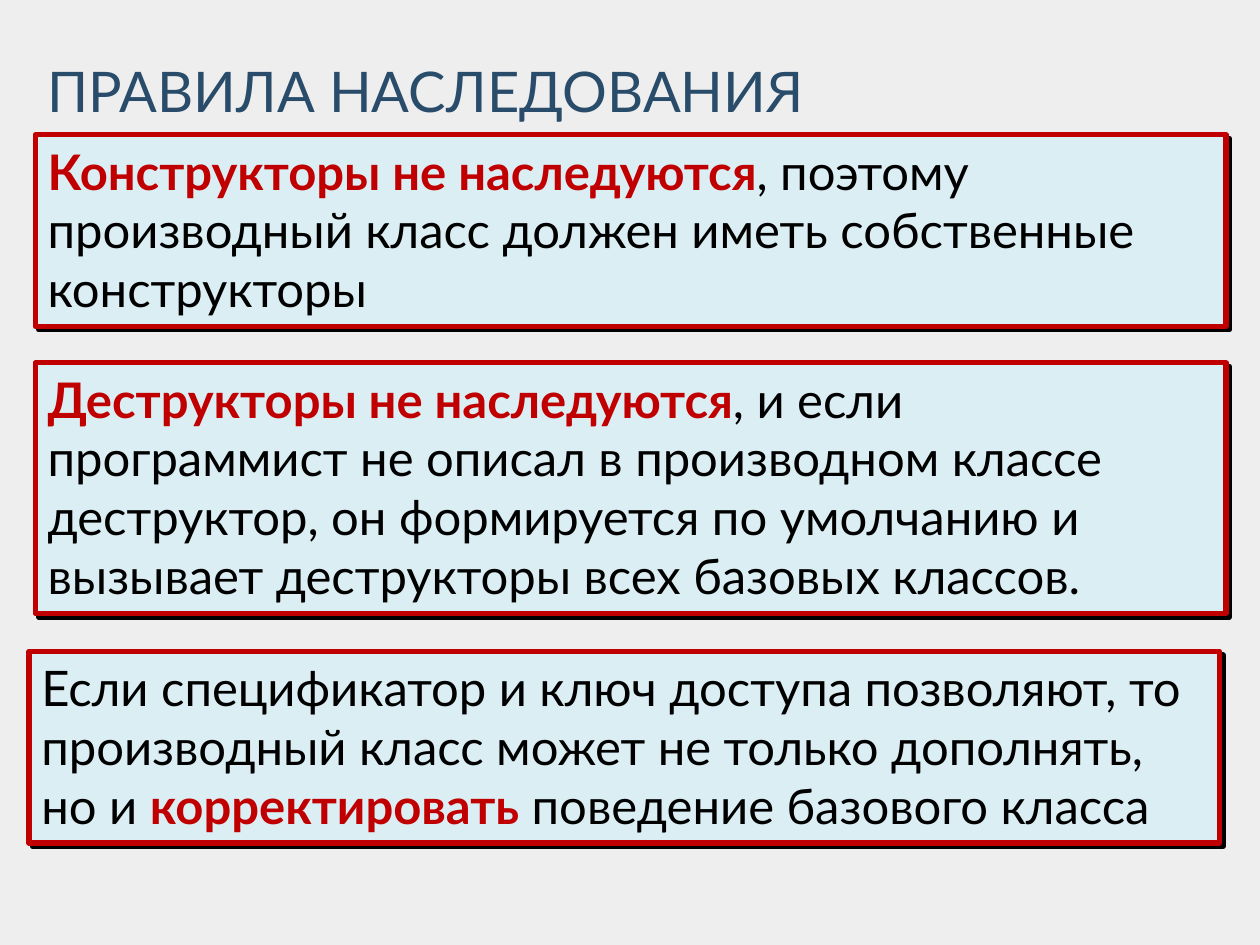
from lxml.etree import SubElement
from pptx import Presentation
from pptx.dml.color import RGBColor
from pptx.enum.shapes import MSO_SHAPE as Shape
from pptx.enum.text import MSO_ANCHOR as Anchor, MSO_AUTO_SIZE as AutoSize, PP_ALIGN as Align
from pptx.oxml.ns import qn
from pptx.util import Inches, Pt

RED = "C00000"
BLACK = "000000"
NAVY = "284C6A"
PALE_BLUE = "DBEEF4"
GRAY = "EEEEEE"

RULES = [
    (0.28, 1.07, 1.52, [
        ("Конструкторы не наследуются", True),
        (", поэтому производный класс должен иметь собственные конструкторы", False),
    ]),
    (0.28, 2.88, 1.99, [
        ("Деструкторы не наследуются", True),
        (", и если программист не описал в производном классе деструктор, "
         "он формируется по умолчанию и вызывает деструкторы всех базовых классов.", False),
    ]),
    (0.23, 5.17, 1.52, [
        ("Если спецификатор и ключ доступа позволяют, то производный класс "
         "может не только дополнять, но и ", False),
        ("корректировать", True),
        (" поведение базового класса", False),
    ]),
]


def color(value):
    return RGBColor.from_string(value)


def set_values(target, values):
    for name, value in values.items():
        setattr(target, name, value)


def add_span(para, text, size, fill, bold=False):
    span = para.add_run()
    span.text = text
    set_values(span.font, {"name": "Lato", "size": Pt(size), "bold": bold})
    span.font.color.rgb = color(fill)


def format_frame(frame, **extra):
    set_values(frame, {
        "word_wrap": True,
        "margin_left": Inches(0.1), "margin_right": Inches(0.1),
        "margin_top": Inches(0.05), "margin_bottom": Inches(0.05),
        **extra,
    })
    para = frame.paragraphs[0]
    para.alignment = Align.LEFT
    return para


def add_shadow(shape, fill, distance, angle):
    shape.shadow.inherit = False
    effects = shape._element.spPr.find(qn("a:effectLst"))
    shadow = SubElement(effects, qn("a:outerShdw"), {
        "dist": str(Pt(distance)), "dir": str(angle * 60000),
        "algn": "ctr", "rotWithShape": "0",
    })
    SubElement(shadow, qn("a:srgbClr"), val=fill)


def add_title(page, text):
    box = page.shapes.add_textbox(Inches(0.28), Inches(0.36), Inches(9.37), Inches(0.71))
    para = format_frame(box.text_frame, vertical_anchor=Anchor.MIDDLE)
    add_span(para, text, 32, NAVY)


def add_rule(page, left, top, height, spans):
    box = page.shapes.add_shape(
        Shape.RECTANGLE, Inches(left), Inches(top), Inches(9.45), Inches(height))
    box.fill.solid()
    box.fill.fore_color.rgb = color(PALE_BLUE)
    box.line.color.rgb = color(RED)
    box.line.width = Pt(3)
    add_shadow(box, BLACK, 2.8, 45)
    para = format_frame(box.text_frame, vertical_anchor=Anchor.TOP,
                        auto_size=AutoSize.SHAPE_TO_FIT_TEXT)
    for text, key in spans:
        add_span(para, text, 28, RED if key else BLACK, key)


def main():
    deck = Presentation()
    set_values(deck, {"slide_width": Inches(10), "slide_height": Inches(7.5)})
    page = deck.slides.add_slide(deck.slide_layouts[6])
    page.background.fill.solid()
    page.background.fill.fore_color.rgb = color(GRAY)
    add_title(page, "ПРАВИЛА НАСЛЕДОВАНИЯ")
    for rule in RULES:
        add_rule(page, *rule)
    deck.save("out.pptx")


if __name__ == "__main__":
    main()
